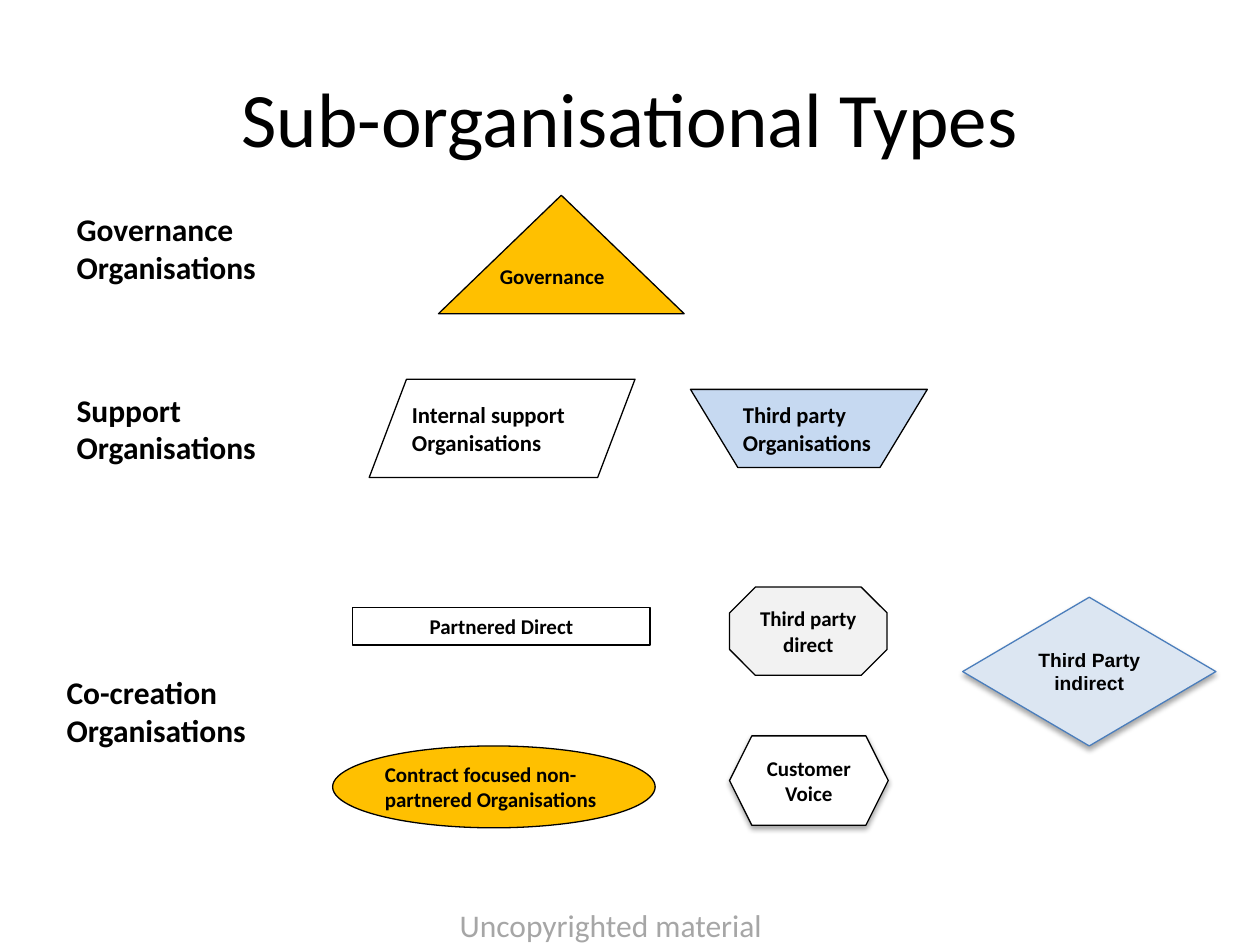
from lxml.etree import SubElement
from pptx import Presentation
from pptx.dml.color import RGBColor
from pptx.enum.shapes import MSO_SHAPE
from pptx.enum.text import MSO_ANCHOR, PP_ALIGN
from pptx.oxml.ns import qn
from pptx.util import Inches, Pt

TITLE = "Sub-organisational Types"
FOOTER = "Uncopyrighted material"

HEADINGS = [
    (0.51, 1.62, ["Governance Organisations"]),
    (0.51, 3.05, ["Support Organisations"]),
    (0.43, 5.29, ["Co-creation", "Organisations"]),
]

EVEN = (0.04, 0.04, 0.04, 0.04)
SIDELESS = (0, 0.05, 0, 0.05)
LEFT, CENTER = PP_ALIGN.LEFT, PP_ALIGN.CENTER

ORGANISATIONS = [
    dict(kind=MSO_SHAPE.ISOSCELES_TRIANGLE, box=(3.48, 1.55, 1.95, 0.94), fill="FFC000",
         lines=["Governance"], insets=(0, 0.04, 0, 0.16), align=LEFT, wrap=False),
    dict(kind=MSO_SHAPE.PARALLELOGRAM, box=(2.93, 3.01, 2.11, 0.78), adj=0.38, fill=None,
         lines=["Internal support Organisations"], size=13, align=LEFT),
    dict(kind=MSO_SHAPE.FLOWCHART_MANUAL_OPERATION, box=(5.48, 3.09, 1.88, 0.62),
         fill="C6D9F1", lines=["Third party Organisations"], size=12.9, align=LEFT),
    dict(kind=MSO_SHAPE.RECTANGLE, box=(2.8, 4.82, 2.36, 0.3), fill="FFFFFF",
         lines=["Partnered Direct"], insets=(0.1, 0.05, 0.1, 0.05)),
    dict(kind=MSO_SHAPE.OCTAGON, box=(5.79, 4.66, 1.25, 0.7), fill="F2F2F2",
         lines=["Third party", "direct"]),
    dict(kind=MSO_SHAPE.OVAL, box=(2.64, 5.92, 2.56, 0.65), fill="FFC000",
         lines=["Contract focused non-partnered Organisations"], align=LEFT),
    dict(kind=MSO_SHAPE.HEXAGON, box=(5.79, 5.84, 1.26, 0.71), fill="FFFFFF",
         lines=["Customer Voice"], insets=SIDELESS, shadow=True),
    dict(kind=MSO_SHAPE.DIAMOND, box=(7.64, 4.74, 2.01, 1.18), fill="DCE6F2",
         line="4B7EBC", lines=["Third Party indirect"], insets=(0, 0, 0, 0),
         size=11, font="Arial", shadow=True),
]


def rgb(color):
    return RGBColor.from_string(color)


def write(tf, lines, size, color="000000", bold=True, font="Calibri", align=LEFT):
    for i, line in enumerate(lines):
        p = tf.add_paragraph() if i else tf.paragraphs[0]
        p.alignment = align
        r = p.add_run()
        r.text = line
        r.font.name = font
        r.font.size = Pt(size)
        r.font.bold = bold
        r.font.color.rgb = rgb(color)


def add_text(s, box, lines, wrap=True, **style):
    tf = s.shapes.add_textbox(*map(Inches, box)).text_frame
    tf.word_wrap = wrap
    write(tf, lines, 18, **style)


def add_shadow(sp):
    effects = sp._element.spPr.find(qn("a:effectLst"))
    outer = SubElement(effects, qn("a:outerShdw"), blurRad=str(Pt(3.1)),
                       dist=str(Pt(1.8)), dir="5400000", rotWithShape="0")
    color = SubElement(outer, qn("a:srgbClr"), val="000000")
    SubElement(color, qn("a:alpha"), val="35000")


def add_organisation(s, kind, box, fill, lines, line="000000", adj=None, insets=EVEN,
                     size=12, font="Calibri", align=CENTER, wrap=True, shadow=False):
    sp = s.shapes.add_shape(kind, *map(Inches, box))
    if adj is not None:
        sp.adjustments[0] = adj
    if fill:
        sp.fill.solid()
        sp.fill.fore_color.rgb = rgb(fill)
    else:
        sp.fill.background()
    sp.line.color.rgb = rgb(line)
    sp.line.width = Pt(0.75)
    sp.shadow.inherit = False
    if shadow:
        add_shadow(sp)
    tf = sp.text_frame
    tf.word_wrap = wrap
    tf.vertical_anchor = MSO_ANCHOR.MIDDLE
    tf.margin_left, tf.margin_top, tf.margin_right, tf.margin_bottom = map(Inches, insets)
    write(tf, lines, size, font=font, align=align)


def main():
    prs = Presentation()
    prs.slide_width, prs.slide_height = Inches(10), Inches(7.5)
    s = prs.slides.add_slide(prs.slide_layouts[5])

    title = s.shapes.title
    title.left, title.top, title.width, title.height = map(Inches, (0.5, 0.3, 9, 1.25))
    title.text_frame.vertical_anchor = MSO_ANCHOR.MIDDLE
    write(title.text_frame, [TITLE], 44, bold=False, align=CENTER)

    for left, top, lines in HEADINGS:
        add_text(s, (left, top, 2.34, 0.71), lines)
    for organisation in ORGANISATIONS:
        add_organisation(s, **organisation)
    add_text(s, (3.55, 7.14, 2.68, 0.4), [FOOTER], wrap=False, color="A6A6A6", bold=False)

    prs.save("out.pptx")


if __name__ == "__main__":
    main()
